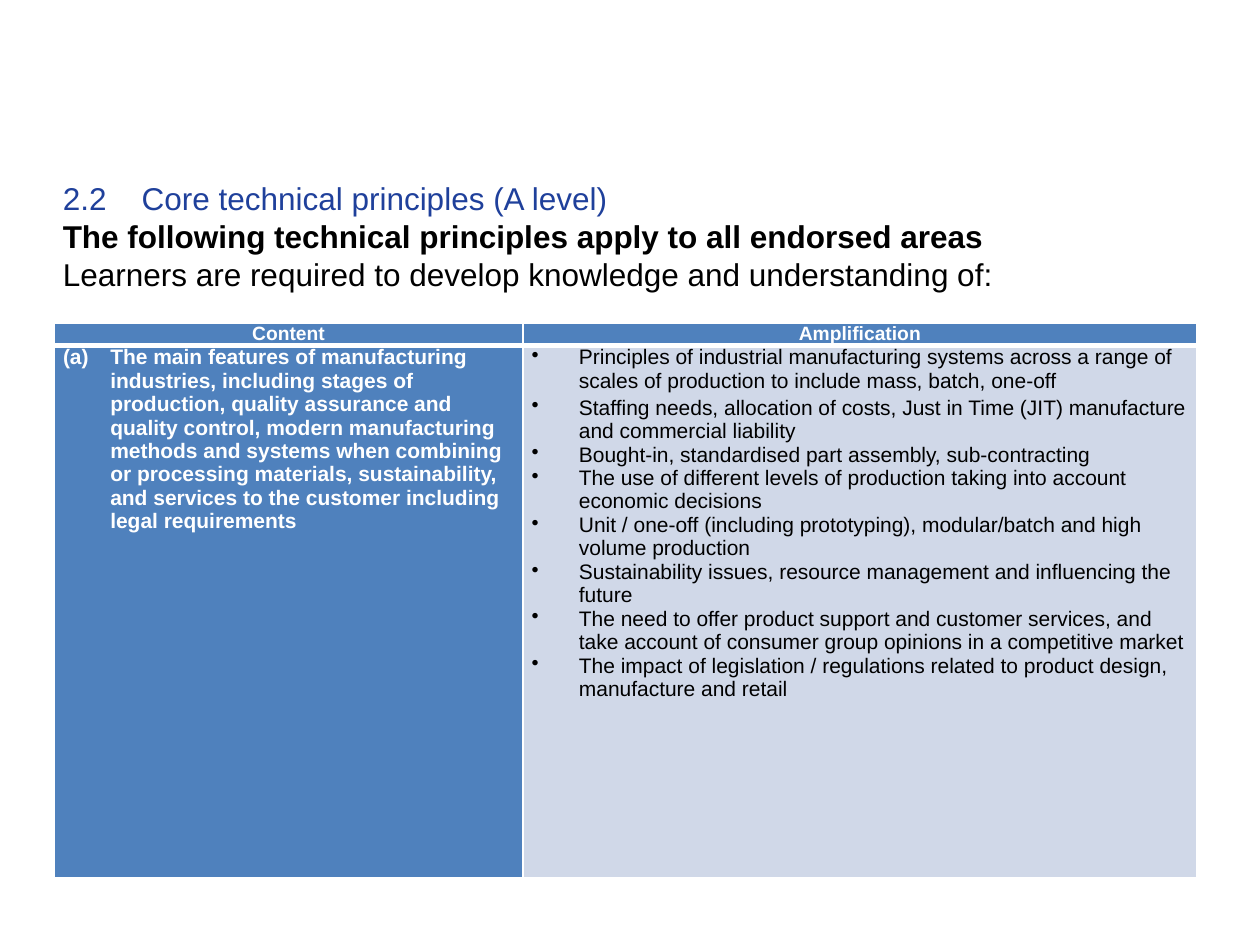
from lxml.etree import SubElement as Sub
from pptx import Presentation
from pptx.dml.color import RGBColor as RGB
from pptx.enum.text import MSO_ANCHOR as Anchor, PP_ALIGN as Align
from pptx.oxml import parse_xml
from pptx.oxml.ns import qn
from pptx.util import Pt

# Content
INTRO = [
    ("2.2\tCore technical principles (A level)", dict(color="blue", tab=45)),
    ("The following technical principles apply to all endorsed areas", dict(bold=True)),
    ("Learners are required to develop knowledge and understanding of:", {}),
]
HEADS = ["Content", "Amplification"]
TOPIC = (
    "The main features of manufacturing industries, including stages of production, "
    "quality assurance and quality control, modern manufacturing methods and systems "
    "when combining or processing materials, sustainability, and services to the "
    "customer including legal requirements"
)
POINTS = [
    "Principles of industrial manufacturing systems across a range of scales of "
    "production to include mass, batch, one-off",
    "Staffing needs, allocation of costs, Just in Time (JIT) manufacture and "
    "commercial liability",
    "Bought-in, standardised part assembly, sub-contracting",
    "The use of different levels of production taking into account economic decisions",
    "Unit / one-off (including prototyping), modular/batch and high volume production",
    "Sustainability issues, resource management and influencing the future",
    "The need to offer product support and customer services, and take account of "
    "consumer group opinions in a competitive market",
    "The impact of legislation / regulations related to product design, manufacture "
    "and retail",
]


class Theme:
    font = "Arial"
    colors = dict(blue="1F409B", black="000000", white="FFFFFF",
                  head="4F81BD", pale="D0D8E8")
    sizes = dict(intro=18, head=11, body=12)
    pitch = dict(intro=21.7, head=12.6, body=13.4)


# Table grid
LEFT, TOP = 31, 184.5
COLS, ROWS = [267.8, 385.2], [13, 304]
INDENT, PAD = 27, 5


def write(frame, text, kind="body", color="black", bold=False, align=Align.LEFT,
          mark=None, tab=None, after=0):
    """Add one paragraph; mark is a (tag, attribute, value) bullet."""
    para = frame.paragraphs[0]
    if para.runs:
        para = frame.add_paragraph()
    props = para._p.get_or_add_pPr()
    if mark:
        props.set("marL", str(Pt(INDENT)))
        props.set("indent", str(-Pt(INDENT)))
        tag, name, value = mark
        Sub(props, qn(tag)).set(name, value)
    if tab:
        stops = Sub(props, qn("a:tabLst"))
        Sub(stops, qn("a:tab"), pos=str(Pt(tab)), algn="l")
    para.alignment = align
    para.line_spacing = Pt(Theme.pitch[kind])
    para.space_before, para.space_after = Pt(0), Pt(after)
    run = para.add_run()
    run.text = text
    font = run.font
    font.name, font.size, font.bold = Theme.font, Pt(Theme.sizes[kind]), bold
    font.color.rgb = RGB.from_string(Theme.colors[color])


def style(cell, fill, top, base):
    """Set fill, margins and white borders of a cell."""
    cell.margin_left = cell.margin_right = Pt(PAD)
    cell.margin_top = cell.margin_bottom = 0
    cell.fill.solid()
    cell.fill.fore_color.rgb = RGB.from_string(Theme.colors[fill])
    props = cell._tc.get_or_add_tcPr()
    for spot, (side, width) in enumerate(zip("LRTB", (1, 1, top, base))):
        props.insert(spot, parse_xml(
            f'<a:ln{side} xmlns:a="http://schemas.openxmlformats.org/drawingml/2006/main" '
            f'w="{Pt(width)}"><a:solidFill><a:srgbClr val="{Theme.colors["white"]}"/>'
            f'</a:solidFill></a:ln{side}>'))


def main():
    deck = Presentation()
    deck.slide_width, deck.slide_height = Pt(720), Pt(540)
    slide = deck.slides.add_slide(deck.slide_layouts[6])

    # Table
    table = slide.shapes.add_table(
        2, 2, Pt(LEFT), Pt(TOP), Pt(sum(COLS)), Pt(sum(ROWS))).table
    for col, width in zip(table.columns, COLS):
        col.width = Pt(width)
    for row, height in zip(table.rows, ROWS):
        row.height = Pt(height)

    # Header row
    for num, head in enumerate(HEADS):
        cell = table.cell(0, num)
        style(cell, "head", 1, 3)
        write(cell.text_frame, head, kind="head", color="white", bold=True,
              align=Align.CENTER)

    # Body row
    left, right = table.cell(1, 0), table.cell(1, 1)
    style(left, "head", 3, 1)
    style(right, "pale", 3, 1)
    write(left.text_frame, TOPIC, color="white", bold=True,
          mark=("a:buAutoNum", "type", "alphaLcParenBoth"))
    for num, point in enumerate(POINTS):
        write(right.text_frame, point, mark=("a:buChar", "char", "•"),
              after=0 if num else 2)

    # Introduction
    frame = slide.shapes.add_textbox(Pt(28.8), Pt(99.4), Pt(625), Pt(93.6)).text_frame
    frame.word_wrap = True
    frame.vertical_anchor = Anchor.TOP
    frame.margin_left = frame.margin_right = Pt(7.2)
    frame.margin_top = frame.margin_bottom = Pt(3)
    for text, form in INTRO:
        write(frame, text, kind="intro", **form)

    deck.save("out.pptx")


if __name__ == "__main__":
    main()
